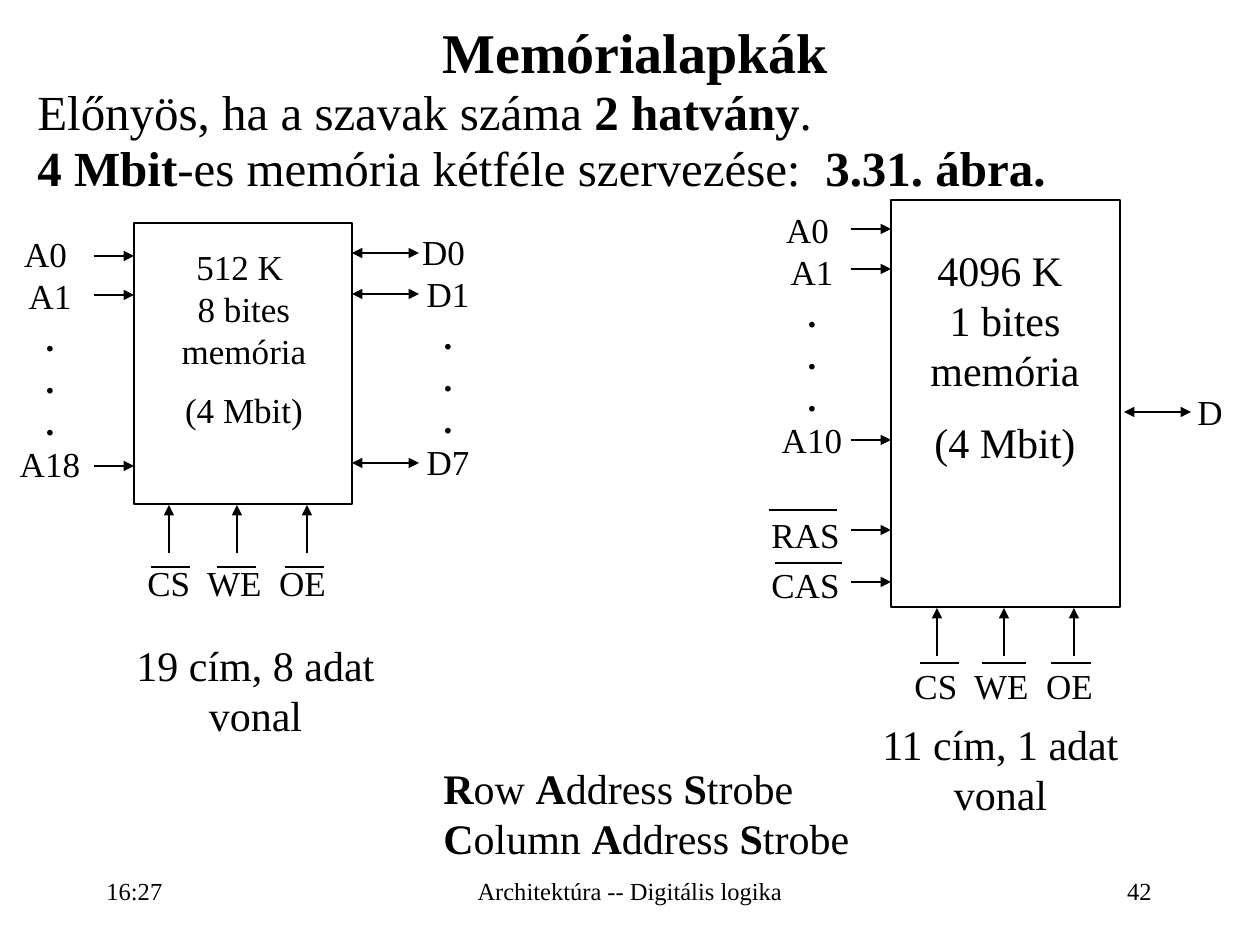
import dataclasses

import lxml.etree
import pptx
import pptx.dml.color
import pptx.enum.shapes
import pptx.enum.text
import pptx.oxml.ns
import pptx.util

SCALE = 914400 / 126
ALIGN = pptx.enum.text.PP_ALIGN
ANCHOR = pptx.enum.text.MSO_ANCHOR


@dataclasses.dataclass(frozen=True)
class Theme:
    """Hold the colours, font, type sizes and line widths."""
    ink: str = "000000"
    font: str = "Times New Roman"
    title: int = 32
    body: int = 28
    large: int = 24
    pin: int = 20
    foot: int = 14
    thin: float = 1
    bar: float = 1.5


THEME = Theme()


def px(*vals):
    """Turn pixel lengths into EMU."""
    return [round(val * SCALE) for val in vals]


def ink():
    """Return the ink colour."""
    return pptx.dml.color.RGBColor.from_string(THEME.ink)


def fill_para(para, words, size):
    """Add runs to a paragraph, with ** switching bold on and off."""
    for row, line in enumerate(words.split("\n")):
        if row:
            para.add_line_break()
        for part, chunk in enumerate(line.split("**")):
            if chunk:
                run = para.add_run()
                run.text = chunk
                run.font.name = THEME.font
                run.font.size = pptx.util.Pt(size)
                run.font.bold = part % 2 == 1
                run.font.color.rgb = ink()


def text(slide, box, paras, size=THEME.pin, align=ALIGN.CENTER,
         lead=None, anchor=ANCHOR.TOP, gap=True):
    """Add a text box; a paragraph may be a (words, size, align) tuple."""
    frame = slide.shapes.add_textbox(*px(*box)).text_frame
    frame.word_wrap = True
    frame.vertical_anchor = anchor
    for num, item in enumerate(paras):
        words, pts, side = item if isinstance(item, tuple) else (item, size, align)
        para = frame.add_paragraph() if num else frame.paragraphs[0]
        para.alignment = side
        if lead:
            para.line_spacing = lead
        if num and gap:
            para.space_before = pptx.util.Pt(pts / 2)
        fill_para(para, words, pts)


def line(slide, ends, width=THEME.thin, heads=()):
    """Draw a straight line with optional arrowheads."""
    link = slide.shapes.add_connector(
        pptx.enum.shapes.MSO_CONNECTOR.STRAIGHT, *px(*ends))
    link.line.color.rgb = ink()
    link.line.width = pptx.util.Pt(width)
    stroke = link.line._get_or_add_ln()
    for name in heads:
        lxml.etree.SubElement(
            stroke, pptx.oxml.ns.qn("a:" + name), type="triangle")
    lxml.etree.SubElement(
        link._element.spPr, pptx.oxml.ns.qn("a:effectLst"))


def chip(slide, box, label, size, inner):
    """Draw a memory chip outline and its label."""
    body = slide.shapes.add_shape(
        pptx.enum.shapes.MSO_SHAPE.RECTANGLE, *px(*box))
    body.shadow.inherit = False
    body.fill.background()
    body.line.color.rgb = ink()
    body.line.width = pptx.util.Pt(THEME.thin)
    text(slide, inner, [label, "(4 Mbit)"], size=size)


def bus(slide, left, top, name, last):
    """List the first and last pins of a bus."""
    text(slide, (left, top, 100, 265),
         [f"{name}0 \n{name}1\n**.**\n**.**\n**.**\n{name}{last}"])


def pins(slide, left, length, rows, heads):
    """Draw a column of horizontal pin arrows."""
    for row in rows:
        line(slide, (left, row, left + length, row), heads=heads)


def gates(slide, left, top, cols):
    """Draw the control pins below a chip with their names."""
    for col in cols:
        line(slide, (col, top, col, top + 48), heads=["headEnd"])
    text(slide, (left, top + 50, 234, 54), ["CS  WE  OE"], align=ALIGN.LEFT)


def bars(slide, row, spans):
    """Draw the overlines of inverted signals."""
    for start, end in spans:
        line(slide, (start, row, end, row), width=THEME.bar)


def narrow(slide):
    """Draw the chip organised in 8-bit words."""
    chip(slide, (134, 223, 218, 281), "512 K \n8 bites\nmemória",
         THEME.pin, (154, 239, 180, 202))
    bus(slide, 0, 226, "A", 18)
    bus(slide, 398, 224, "D", 7)
    pins(slide, 94, 40, (256, 295, 466), ["tailEnd"])
    pins(slide, 352, 67, (253, 294, 463), ["headEnd", "tailEnd"])
    gates(slide, 135, 505, (169, 237, 307))
    bars(slide, 567, [(151, 190), (217, 256), (285, 324)])
    text(slide, (122, 633, 267, 113), ["19 cím, 8 adat vonal"],
         size=THEME.large)


def deep(slide):
    """Draw the chip organised in 1-bit words."""
    chip(slide, (891, 200, 229, 407), "4096 K \n1 bites\nmemória",
         THEME.large, (915, 238, 180, 239))
    bus(slide, 762, 202, "A", 10)
    pins(slide, 851, 40, (229, 269, 440, 530, 582), ["tailEnd"])
    pins(slide, 1124, 67, [412], ["headEnd", "tailEnd"])
    text(slide, (1160, 384, 100, 54), ["D"])
    gates(slide, 902, 608, (937, 1004, 1074))
    bars(slide, 663, [(920, 959), (982, 1026), (1051, 1091)])
    text(slide, (759, 499, 116, 113), ["RAS\nCAS"],
         align=ALIGN.LEFT, lead=1.2)
    bars(slide, 510, [(769, 837)])
    bars(slide, 563, [(775, 842)])
    text(slide, (867, 712, 267, 113), ["11 cím, 1 adat vonal"],
         size=THEME.large)


def foot(slide):
    """Add the time, the course name and the page number."""
    for box, words, side in (
            ((94, 858, 261, 68), "16:27", ALIGN.LEFT),
            ((431, 861, 398, 62), "Architektúra -- Digitális logika", ALIGN.CENTER),
            ((903, 861, 261, 62), "42", ALIGN.RIGHT)):
        text(slide, box, [words], size=THEME.foot, align=side,
             lead=0.93, anchor=ANCHOR.MIDDLE)


def main():
    """Build and save the slide."""
    deck = pptx.Presentation()
    deck.slide_width, deck.slide_height = px(1260, 945)
    slide = deck.slides.add_slide(deck.slide_layouts[6])
    text(slide, (25, 16, 1235, 192),
         [("**Memórialapkák **", THEME.title, ALIGN.CENTER),
          "Előnyös, ha a szavak száma **2 hatvány**.",
          "**4 Mbit**-es memória kétféle szervezése:**  3.31. ábra.**"],
         size=THEME.body, align=ALIGN.LEFT, lead=0.95, gap=False)
    narrow(slide)
    deep(slide)
    text(slide, (431, 756, 433, 113),
         ["**R**ow **A**ddress **S**trobe \n**C**olumn **A**ddress **S**trobe"],
         size=THEME.large, align=ALIGN.LEFT)
    foot(slide)


    deck.save("out.pptx")


if __name__ == "__main__":
    main()
